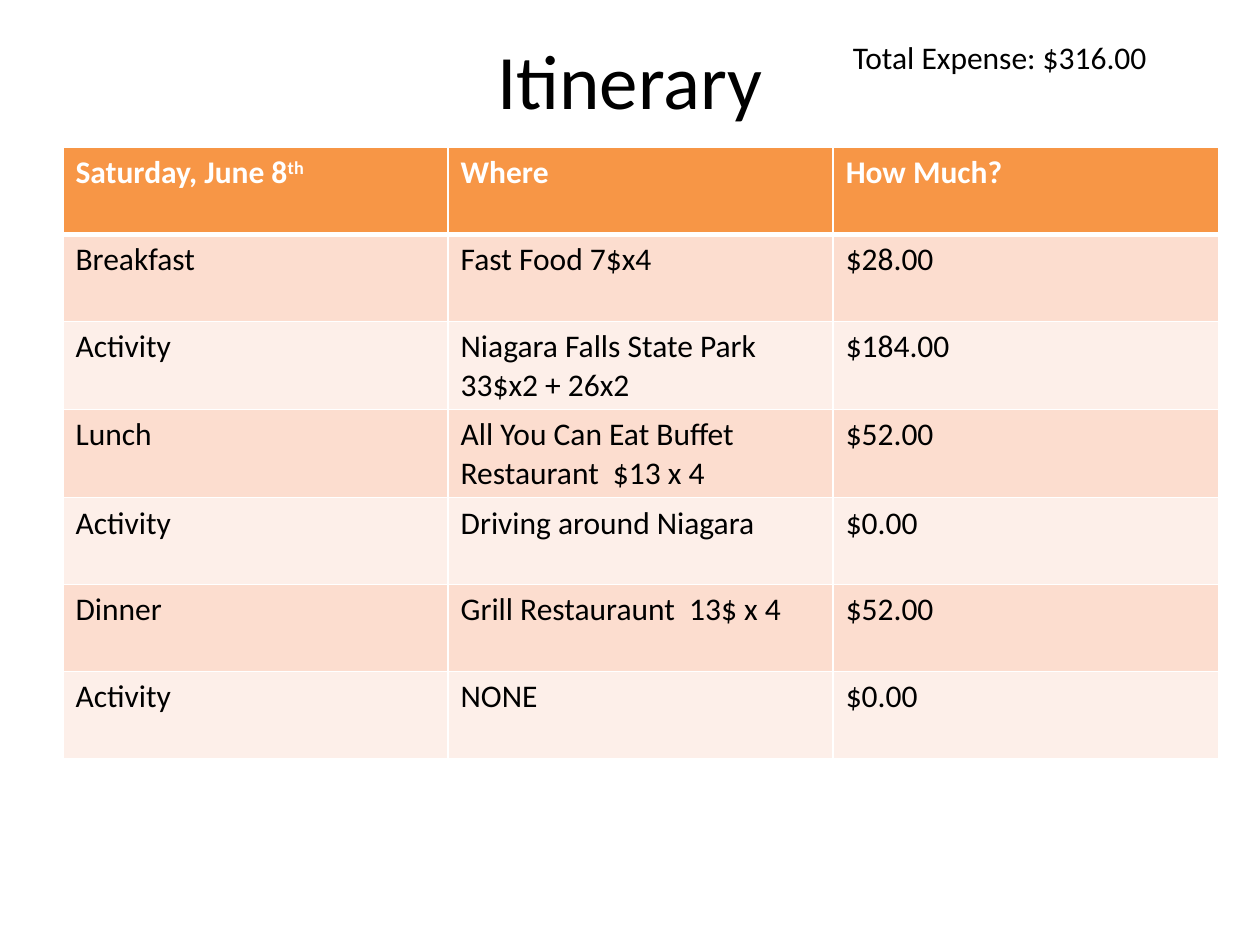
"""Build a one-day trip itinerary slide with a cost table."""
from dataclasses import dataclass

import lxml.etree
import pptx
import pptx.dml.color
import pptx.enum.text
import pptx.oxml.ns
import pptx.util

Inches = pptx.util.Inches
Pt = pptx.util.Pt
RGBColor = pptx.dml.color.RGBColor
Align = pptx.enum.text.PP_ALIGN
Anchor = pptx.enum.text.MSO_ANCHOR
qn = pptx.oxml.ns.qn

FONT = "Calibri"
BLACK = RGBColor(0x00, 0x00, 0x00)
WHITE = RGBColor(0xFF, 0xFF, 0xFF)
ORANGE = RGBColor(0xF7, 0x96, 0x46)
BANDS = (RGBColor(0xFC, 0xDD, 0xCF), RGBColor(0xFD, 0xEF, 0xE9))
COLUMN_WIDTH = 9.17 / 3
ROW_HEIGHT = 0.69


@dataclass(frozen=True)
class Label:
    text: str
    left: float
    top: float
    width: float
    height: float
    size: int
    align: Align
    anchor: Anchor


@dataclass(frozen=True)
class Entry:
    event: str
    where: str
    cost: str


LABELS = (
    Label("Itinerary", 0.5, 0, 9, 1.25, 44, Align.CENTER, Anchor.MIDDLE),
    Label("Total Expense: $316.00", 6.67, 0.25, 3.08, 0.4, 18, Align.LEFT, Anchor.TOP),
)
HEADER = Entry("Saturday, June 8", "Where", "How Much?")
ENTRIES = (
    Entry("Breakfast", "Fast Food 7$x4", "$28.00"),
    Entry("Activity", "Niagara Falls State Park 33$x2 + 26x2", "$184.00"),
    Entry("Lunch", "All You Can Eat Buffet Restaurant  $13 x 4", "$52.00"),
    Entry("Activity", "Driving around Niagara", "$0.00"),
    Entry("Dinner", "Grill Restauraunt  13$ x 4", "$52.00"),
    Entry("Activity", "NONE", "$0.00"),
)


def add_run(p, text: str, size: int, color: RGBColor, bold: bool = False):
    r = p.add_run()
    r.text = text
    r.font.name = FONT
    r.font.size = Pt(size)
    r.font.bold = bold
    r.font.color.rgb = color
    return r


def add_label(s, label: Label) -> None:
    sp = s.shapes.add_textbox(Inches(label.left), Inches(label.top),
                              Inches(label.width), Inches(label.height))
    tf = sp.text_frame
    tf.word_wrap = True
    tf.vertical_anchor = label.anchor
    p = tf.paragraphs[0]
    p.alignment = label.align
    add_run(p, label.text, label.size, BLACK)


def set_border(cell, side: str, width: float) -> None:
    ln = lxml.etree.SubElement(cell._tc.get_or_add_tcPr(), qn(f"a:ln{side}"), w=str(Pt(width)))
    fill = lxml.etree.SubElement(ln, qn("a:solidFill"))
    lxml.etree.SubElement(fill, qn("a:srgbClr"), val=str(WHITE))


def fill_row(table, row: int, entry: Entry, fill: RGBColor, color: RGBColor) -> None:
    header = row == 0
    widths = {"L": 1, "R": 1, "T": 3 if row == 1 else 1, "B": 3 if header else 1}
    for column, text in enumerate((entry.event, entry.where, entry.cost)):
        cell = table.cell(row, column)
        for side, width in widths.items():
            set_border(cell, side, width)
        cell.fill.solid()
        cell.fill.fore_color.rgb = fill
        add_run(cell.text_frame.paragraphs[0], text, 18, color, header)


def add_itinerary(s) -> None:
    rows = len(ENTRIES) + 1
    table = s.shapes.add_table(rows, 3, Inches(0.5), Inches(1.17),
                               Inches(3 * COLUMN_WIDTH), Inches(rows * ROW_HEIGHT)).table
    for column in table.columns:
        column.width = Inches(COLUMN_WIDTH)
    for row in table.rows:
        row.height = Inches(ROW_HEIGHT)
    fill_row(table, 0, HEADER, ORANGE, WHITE)
    for i, entry in enumerate(ENTRIES):
        fill_row(table, i + 1, entry, BANDS[i % 2], BLACK)
    date = table.cell(0, 0).text_frame.paragraphs[0]
    r = add_run(date, "th", 18, WHITE, True)
    r._r.get_or_add_rPr().set("baseline", "30000")


def main() -> None:
    prs = pptx.Presentation()
    prs.slide_width = Inches(10)
    prs.slide_height = Inches(7.5)
    s = prs.slides.add_slide(prs.slide_layouts[6])
    for label in LABELS:
        add_label(s, label)
    add_itinerary(s)
    prs.save("out.pptx")


if __name__ == "__main__":
    main()
